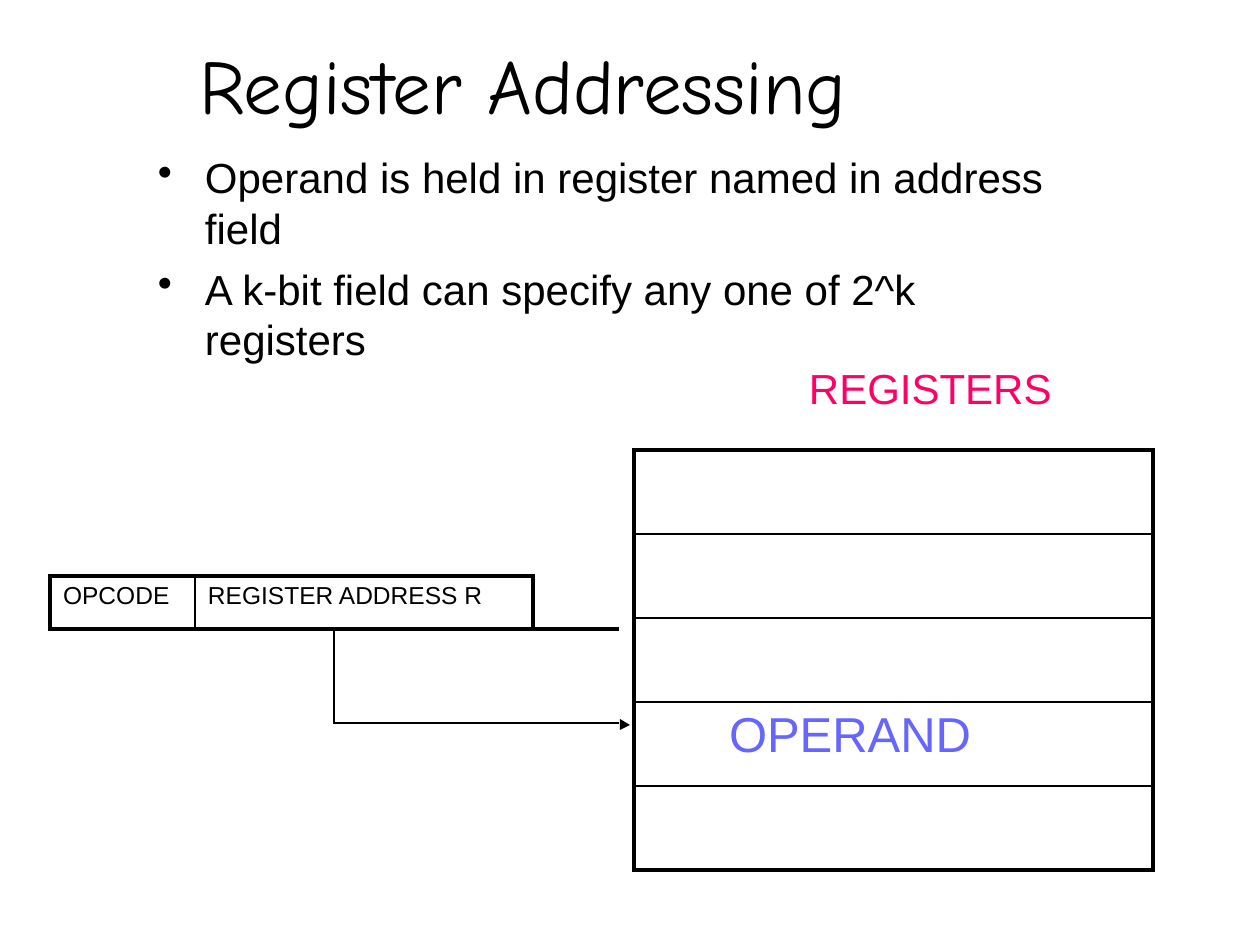
import pptx
import pptx.dml.color
import pptx.enum.text
import pptx.oxml
import pptx.oxml.ns
import pptx.util

BLACK = pptx.dml.color.RGBColor(0x00, 0x00, 0x00)
PINK = pptx.dml.color.RGBColor(0xFF, 0x00, 0x66)
VIOLET = pptx.dml.color.RGBColor(0x66, 0x66, 0xFF)
SCALE = 914400 / 126
HEAVY, MEDIUM, THIN = 2.25, 1, 0.75


def px(length):
    return pptx.util.Emu(round(length * SCALE))


def set_values(target, values):
    for name, value in values.items():
        setattr(target, name, value)


def element(xml):
    return pptx.oxml.parse_xml(xml.replace(" ", f' {pptx.oxml.ns.nsdecls("a")} ', 1))


class Board:
    def __init__(self, deck, font):
        self.slide = deck.slides.add_slide(deck.slide_layouts[6])
        self.font = font

    def wording(self, paragraph, words, size, color, font=None, before=1):
        paragraph.space_before = pptx.util.Pt(before)
        run = paragraph.add_run()
        run.text = words
        set_values(run.font, {"size": pptx.util.Pt(size), "name": font or self.font})
        run.font.color.rgb = color

    def text(self, box, lines, size, color=BLACK, font=None, hang=0, right=0,
             anchor=pptx.enum.text.MSO_ANCHOR.TOP):
        frame = self.slide.shapes.add_textbox(*map(px, box)).text_frame
        set_values(frame, {
            "word_wrap": True, "vertical_anchor": anchor, "margin_left": 0,
            "margin_right": px(right), "margin_top": px(1), "margin_bottom": 0,
        })
        for index, words in enumerate(lines):
            paragraph = frame.add_paragraph() if index else frame.paragraphs[0]
            self.wording(paragraph, words, size, color, font, 6 if index else 1)
            if hang:
                properties = paragraph._p.get_or_add_pPr()
                properties.set("marL", str(px(hang)))
                properties.set("indent", str(-px(hang)))
                properties.append(element('<a:buChar char="•"/>'))

    def table(self, left, top, widths, heights):
        grid = self.slide.shapes.add_table(
            len(heights), len(widths), px(left), px(top),
            px(sum(widths)), px(sum(heights))).table
        set_values(grid, {"first_row": False, "horz_banding": False})
        for column, width in zip(grid.columns, widths):
            column.width = px(width)
        for row, height in zip(grid.rows, heights):
            row.height = px(height)
        return grid

    def cell(self, cell, **borders):
        properties = cell._tc.get_or_add_tcPr()
        for side in "LRTB":
            weight = borders.get(side)
            if weight:
                line = (f'<a:ln{side} w="{pptx.util.Pt(weight)}"><a:solidFill>'
                        f'<a:srgbClr val="{BLACK}"/></a:solidFill></a:ln{side}>')
            else:
                line = f'<a:ln{side} w="0"><a:noFill/></a:ln{side}>'
            properties.append(element(line))
        cell.fill.background()

    def cell_text(self, cell, words, size, color, indent):
        set_values(cell, {"margin_left": px(indent), "margin_right": 0,
                          "margin_top": px(6), "margin_bottom": 0})
        self.wording(cell.text_frame.paragraphs[0], words, size, color, before=3.7)

    def polygon(self, points, color):
        builder = self.slide.shapes.build_freeform(*points[0], scale=SCALE)
        builder.add_line_segments(points[1:], close=True)
        shape = builder.convert_to_shape()
        shape.shadow.inherit = False
        shape.fill.solid()
        shape.fill.fore_color.rgb = color
        shape.line.fill.background()


def main():
    deck = pptx.Presentation()
    set_values(deck, {"slide_width": px(1260), "slide_height": px(945)})
    board = Board(deck, "Arial")

    board.text((199, 35, 737, 96), ["Register Addressing"], 44, font="Comic Neue",
               anchor=pptx.enum.text.MSO_ANCHOR.MIDDLE)
    board.text((158, 151, 936, 165), [
        "Operand is held in register named in address  field",
        "A k-bit field can specify any one of 2^k registers",
    ], 24, hang=47, right=20)

    registers = board.table(634, 450, [519], [84] * 5)
    last = len(registers.rows) - 1
    for row in range(last + 1):
        board.cell(registers.cell(row, 0), L=HEAVY, R=HEAVY,
                   T=MEDIUM if row else HEAVY,
                   B=HEAVY if row == last else MEDIUM)
    board.cell_text(registers.cell(3, 0), "OPERAND", 28, VIOLET, 95)
    board.text((809, 362, 246, 54), ["REGISTERS"], 24, PINK)
    board.polygon([(620, 719), (620, 730), (630, 725)], BLACK)

    instruction = board.table(50, 576, [145, 139, 199, 86], [53, 94])
    borders = [
        [{"L": HEAVY, "R": MEDIUM, "T": HEAVY, "B": HEAVY},
         {"L": MEDIUM, "R": HEAVY, "T": HEAVY, "B": HEAVY},
         {"R": HEAVY, "T": HEAVY, "B": HEAVY},
         {"L": HEAVY, "B": HEAVY}],
        [{"R": THIN, "T": HEAVY},
         {"R": THIN, "T": HEAVY},
         {"L": THIN, "T": HEAVY, "B": MEDIUM},
         {"T": HEAVY, "B": MEDIUM}],
    ]
    for row, sides_of_row in enumerate(borders):
        for column, sides in enumerate(sides_of_row):
            board.cell(instruction.cell(row, column), **sides)
    for row, column in [(0, 1), (1, 0), (1, 2)]:
        instruction.cell(row, column).merge(instruction.cell(row, column + 1))
    for column, words in enumerate(["OPCODE", "REGISTER ADDRESS R"]):
        board.cell_text(instruction.cell(0, column), words, 14, BLACK, 13)

    deck.save("out.pptx")


if __name__ == "__main__":
    main()
